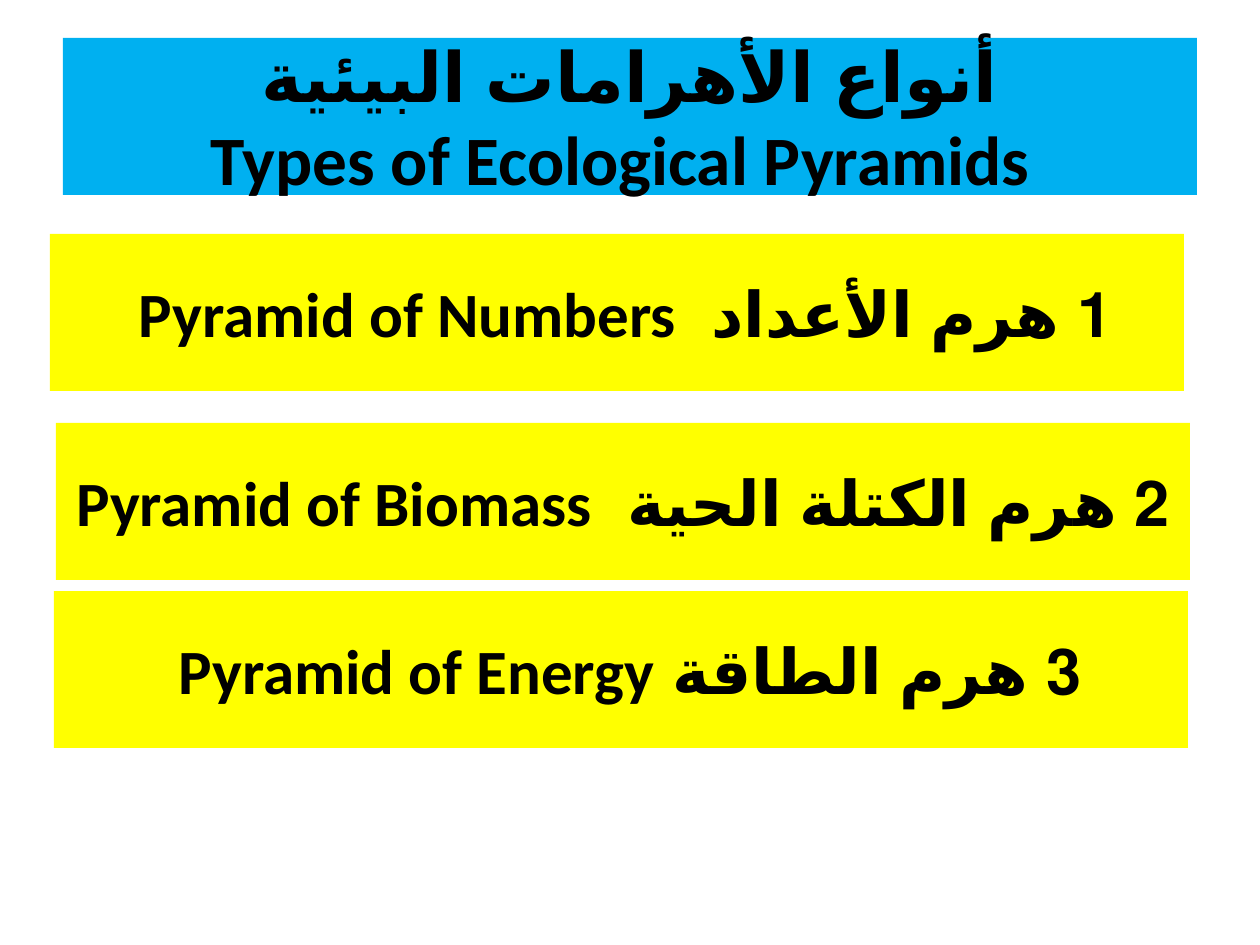
from pptx import Presentation
from pptx import util as u
from pptx.dml.color import RGBColor
from pptx.enum import lang, shapes, text

SKY = RGBColor(0x00, 0xB0, 0xF0)
YELLOW = RGBColor(0xFF, 0xFF, 0x00)
BLACK = RGBColor(0x00, 0x00, 0x00)
PX_PER_INCH = 126
BANNER_SIZE = (1134, 157)


def px(length):
    return u.Emu(round(length * u.Inches(1) / PX_PER_INCH))


def write(para, words, *, font, size, color, bold=True):
    for index, line in enumerate(words.split("\n")):
        if index:
            para.add_line_break()
        span = para.add_run()
        span.text = line
        span.font.name = font
        span.font.size = u.Pt(size)
        span.font.bold = bold
        span.font.color.rgb = color
        span.font.language_id = lang.MSO_LANGUAGE_ID.ARABIC_IRAQ


class PyramidSlide:
    """Holds the text style and the current page, and draws right-to-left banners."""

    def __init__(self, page, font="Calibri", color=BLACK):
        self.page = page
        self.font = font
        self.color = color

    def banner(self, left, top, words, *, fill, size):
        box = self.page.shapes.add_shape(
            shapes.MSO_SHAPE.RECTANGLE, *map(px, (left, top, *BANNER_SIZE)))
        box.shadow.inherit = False
        box.fill.solid()
        box.fill.fore_color.rgb = fill
        box.line.fill.background()
        frame = box.text_frame
        frame.word_wrap = True
        frame.vertical_anchor = text.MSO_ANCHOR.MIDDLE
        para = frame.paragraphs[0]
        para.alignment = text.PP_ALIGN.CENTER
        para._p.get_or_add_pPr().set("rtl", "1")
        write(para, words, font=self.font, size=size, color=self.color)


def main():
    deck = Presentation()
    deck.slide_width, deck.slide_height = px(1260), px(945)
    slide = PyramidSlide(deck.slides.add_slide(deck.slide_layouts[6]))
    slide.banner(63, 38, "أنواع الأهرامات البيئية\n Types of Ecological Pyramids",
                 fill=SKY, size=39.6)
    pyramids = [
        (50, 234, "1 هرم الأعداد  Pyramid of Numbers "),
        (56, 423, "2 هرم الكتلة الحية  Pyramid of Biomass"),
        (54, 591, "3 هرم الطاقة Pyramid of Energy "),
    ]
    for left, top, words in pyramids:
        slide.banner(left, top, words, fill=YELLOW, size=36)
    deck.save("out.pptx")


if __name__ == "__main__":
    main()
